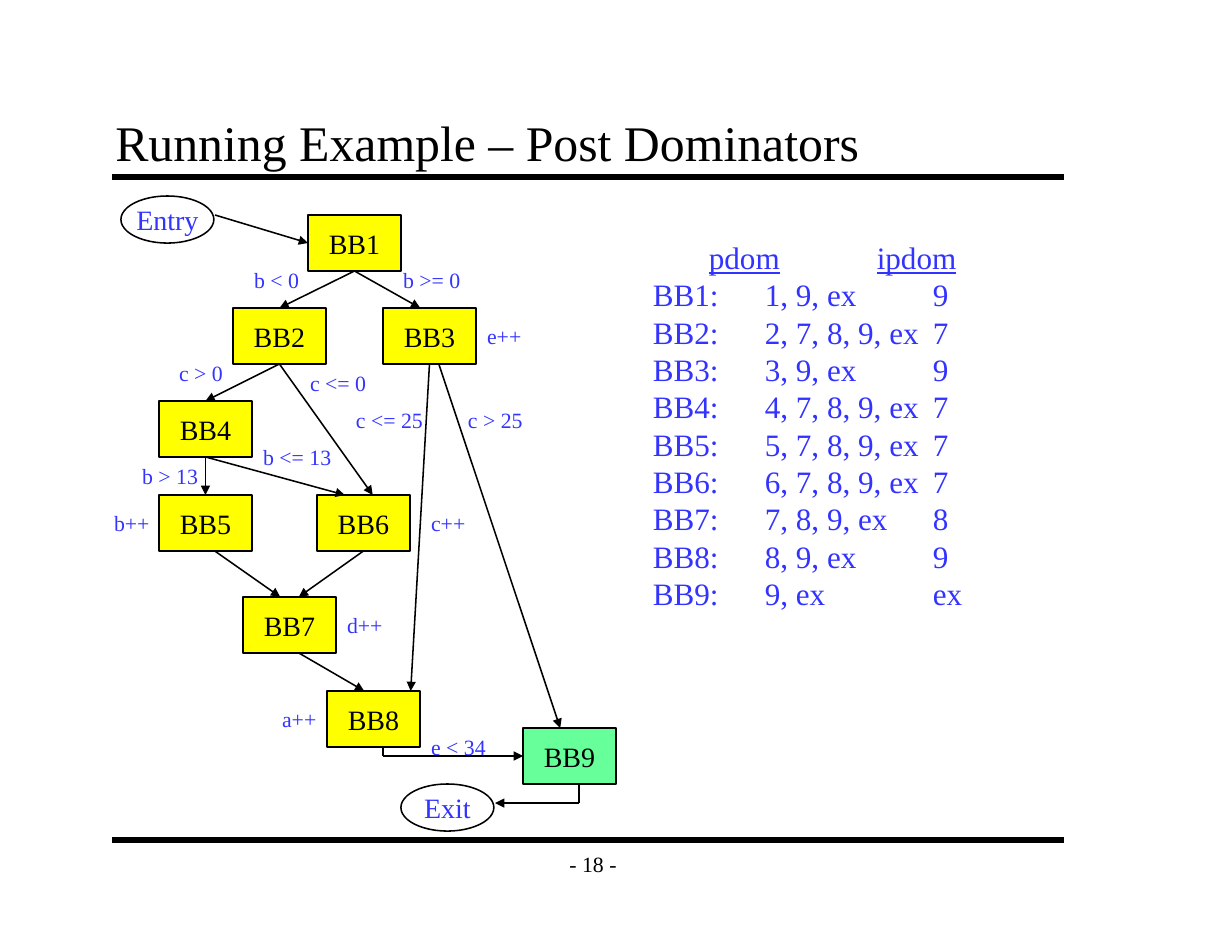
from dataclasses import dataclass

from lxml import etree
from pptx import Presentation
from pptx.dml.color import RGBColor
from pptx.enum.shapes import MSO_CONNECTOR, MSO_SHAPE
from pptx.enum.text import MSO_ANCHOR, PP_ALIGN
from pptx.oxml.ns import qn
from pptx.util import Inches, Pt

STRAIGHT = MSO_CONNECTOR.STRAIGHT
RECTANGLE, OVAL = MSO_SHAPE.RECTANGLE, MSO_SHAPE.OVAL
TOP, MIDDLE, BOTTOM = MSO_ANCHOR.TOP, MSO_ANCHOR.MIDDLE, MSO_ANCHOR.BOTTOM
LEFT, CENTER = PP_ALIGN.LEFT, PP_ALIGN.CENTER


@dataclass(frozen=True)
class Theme:
    font: str = "Times New Roman"
    ink: RGBColor = RGBColor(0x00, 0x00, 0x00)
    accent: RGBColor = RGBColor(0x33, 0x33, 0xFF)
    block: RGBColor = RGBColor(0xFF, 0xFF, 0x00)
    last_block: RGBColor = RGBColor(0x66, 0xFF, 0x99)
    title_size: int = 32
    table_size: int = 20
    node_size: int = 18
    label_size: int = 14
    rule_width: int = 4
    line_width: int = 1


THEME = Theme()
NODE_W, BLOCK_H, TERMINAL_H = 0.83, 0.5, 0.42

BLOCKS = {
    "BB1": (2.75, 1.92), "BB2": (2.08, 2.75), "BB3": (3.42, 2.75),
    "BB4": (1.42, 3.58), "BB5": (1.42, 4.42), "BB6": (2.83, 4.42),
    "BB7": (2.17, 5.33), "BB8": (2.92, 6.17), "BB9": (4.67, 6.5),
}
TERMINALS = {"Entry": (1.08, 1.75), "Exit": (3.58, 7)}

# source, share of its width along the bottom, target, share along the top
BRANCHES = [
    ("BB1", 0.5, "BB2", 0.5), ("BB1", 0.5, "BB3", 0.4),
    ("BB2", 0.5, "BB4", 0.5), ("BB2", 0.5, "BB6", 0.6),
    ("BB3", 0.5, "BB8", 0.9), ("BB3", 0.6, "BB9", 0.4),
    ("BB4", 0.5, "BB5", 0.5), ("BB4", 0.5, "BB6", 0.3),
    ("BB5", 0.6, "BB7", 0.4), ("BB6", 0.5, "BB7", 0.6),
    ("BB7", 0.6, "BB8", 0.4),
]
# routes that enter a node from the side
SIDE_ROUTES = [
    [(1.92, 1.92), (2.75, 2.17)],
    [(3.42, 6.67), (3.42, 6.75), (4.67, 6.75)],
    [(5.17, 7), (5.17, 7.17), (4.42, 7.17)],
]
LABELS = [
    ("b < 0", 2.17, 2.33, 0.6), ("b >= 0", 3.5, 2.33, 0.71),
    ("c > 0", 1.5, 3.16, 0.59), ("c <= 0", 2.67, 3.25, 0.7),
    ("b > 13", 1.17, 4.08, 0.7), ("b <= 13", 2.25, 3.91, 0.81),
    ("c <= 25", 3.08, 3.58, 0.8), ("c > 25", 4.08, 3.58, 0.69),
    ("e < 34", 3.75, 6.5, 0.69), ("a++", 2.42, 6.25, 0.51),
    ("b++", 0.92, 4.5, 0.58), ("c++", 3.75, 4.5, 0.58),
    ("d++", 3, 5.41, 0.52), ("e++", 4.25, 2.83, 0.75),
]
DOMINATORS = [
    "\tpdom\t\tipdom",
    "BB1:\t1, 9, ex\t\t9",
    "BB2:\t2, 7, 8, 9, ex\t7",
    "BB3:\t3, 9, ex\t\t9",
    "BB4:\t4, 7, 8, 9, ex\t7",
    "BB5:\t5, 7, 8, 9, ex\t7",
    "BB6:\t6, 7, 8, 9, ex\t7",
    "BB7:\t7, 8, 9, ex\t8",
    "BB8:\t8, 9, ex\t\t9",
    "BB9:\t9, ex\t\tex",
]


def write_text(frame, lines, *, size, color=THEME.accent, align=LEFT, anchor=TOP,
               wrap=False, leading=None, underline_first=False):
    frame.word_wrap = wrap
    frame.vertical_anchor = anchor
    for index, line in enumerate(lines):
        paragraph = frame.paragraphs[0] if index == 0 else frame.add_paragraph()
        paragraph.alignment = align
        if leading:
            paragraph.line_spacing = Pt(leading)
        run = paragraph.add_run()
        run.text = line
        run.font.name = THEME.font
        run.font.size = Pt(size)
        run.font.color.rgb = color
        if underline_first and index == 0:
            run.font.underline = True


def add_text(slide, lines, left, top, width, height, **text_format):
    box = slide.shapes.add_textbox(
        Inches(left), Inches(top), Inches(width), Inches(height))
    write_text(box.text_frame, lines, **text_format)
    return box


def add_node(slide, name, position, height, *, outline=RECTANGLE, fill=None,
             color=THEME.ink):
    left, top = position
    node = slide.shapes.add_shape(
        outline, Inches(left), Inches(top), Inches(NODE_W), Inches(height))
    node.shadow.inherit = False
    if fill is None:
        node.fill.background()
    else:
        node.fill.solid()
        node.fill.fore_color.rgb = fill
    node.line.color.rgb = THEME.ink
    node.line.width = Pt(THEME.line_width)
    write_text(node.text_frame, [name], size=THEME.node_size, color=color,
               align=CENTER, anchor=MIDDLE)


def add_line(slide, start, end, *, width=THEME.line_width, arrow=False):
    points = [Inches(value) for value in (*start, *end)]
    line = slide.shapes.add_connector(STRAIGHT, *points)
    line.line.color.rgb = THEME.ink
    line.line.width = Pt(width)
    properties = line.element.spPr
    if arrow:
        head = etree.SubElement(properties.find(qn("a:ln")), qn("a:tailEnd"))
        head.set("type", "triangle")
    etree.SubElement(properties, qn("a:effectLst"))


def add_route(slide, points):
    """Join the points with lines, the last of which has the arrowhead."""
    last = len(points) - 2
    for index, (start, end) in enumerate(zip(points, points[1:])):
        add_line(slide, start, end, arrow=index == last)


def edge_point(block, share, drop=0):
    left, top = BLOCKS[block]
    return left + share * NODE_W, top + drop


def add_frame(slide):
    """Add the title, the two rules and the page number."""
    for y in (1.58, 7.5):
        add_line(slide, (1, y), (9.5, y), width=THEME.rule_width)
    title = add_text(slide, ["Running Example – Post Dominators"], 0.92, 0.92, 8.5, 0.67,
                     size=THEME.title_size, color=THEME.ink, anchor=BOTTOM, wrap=True)
    page = add_text(slide, ["- 18 -"], 4.92, 7.5, 0.75, 0.42, size=THEME.label_size,
                    color=THEME.ink, align=CENTER, anchor=MIDDLE)
    for box in (title, page):
        frame = box.text_frame
        frame.margin_left = frame.margin_right = Inches(0.11)
        frame.margin_top = frame.margin_bottom = Inches(0.06)


def add_flow_graph(slide):
    for name, position in BLOCKS.items():
        fill = THEME.last_block if name == "BB9" else THEME.block
        add_node(slide, name, position, BLOCK_H, fill=fill)
    for name, position in TERMINALS.items():
        add_node(slide, name, position, TERMINAL_H, outline=OVAL, color=THEME.accent)
    for source, leave, target, enter in BRANCHES:
        add_route(slide, [edge_point(source, leave, BLOCK_H), edge_point(target, enter)])
    for route in SIDE_ROUTES:
        add_route(slide, route)
    for label, left, top, width in LABELS:
        add_text(slide, [label], left, top, width, 0.33, size=THEME.label_size)


def main():
    deck = Presentation()
    deck.slide_width, deck.slide_height = Inches(11), Inches(8.5)
    slide = deck.slides.add_slide(deck.slide_layouts[6])
    add_frame(slide)
    add_flow_graph(slide)
    add_text(slide, DOMINATORS, 5.73, 2.08, 3.91, 3.43, size=THEME.table_size,
             leading=24, underline_first=True)
    deck.save("out.pptx")


if __name__ == "__main__":
    main()
